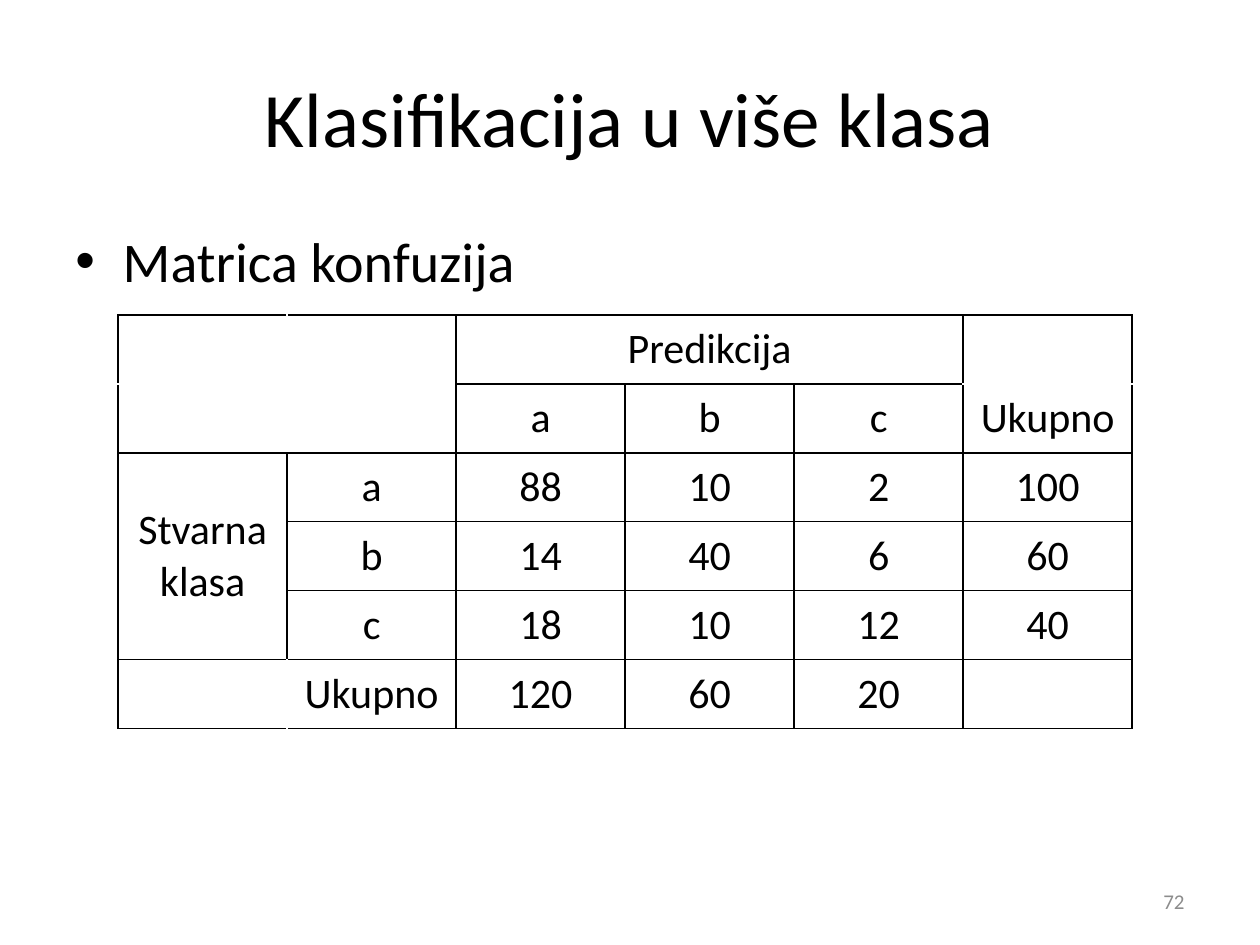
from dataclasses import dataclass

from lxml import etree
from pptx import Presentation
from pptx.dml.color import RGBColor
from pptx.enum import text as t
from pptx.oxml import ns
from pptx.util import Pt


@dataclass(frozen=True)
class Theme:
    font: str = "Calibri"
    ink: str = "000000"
    paper: str = "FFFFFF"
    muted: str = "8C8C8C"
    title: float = 44
    body: float = 32
    table: float = 24
    number: float = 12
    rule: float = 1


@dataclass(frozen=True)
class Box:
    left: float
    top: float
    width: float
    height: float

    def lengths(self):
        return Pt(self.left), Pt(self.top), Pt(self.width), Pt(self.height)


@dataclass(frozen=True)
class Merge:
    first: tuple[int, int]
    last: tuple[int, int]


THEME = Theme()
LEFT, CENTER, RIGHT = t.PP_ALIGN.LEFT, t.PP_ALIGN.CENTER, t.PP_ALIGN.RIGHT
MIDDLE, TOP = t.MSO_ANCHOR.MIDDLE, t.MSO_ANCHOR.TOP

MATRIX_BOX = Box(67.5, 180, 579.6, 236.4)
MATRIX = [
    ["", "", "Predikcija", "", "", ""],
    ["", "", "a", "b", "c", "Ukupno"],
    ["Stvarna\nklasa", "a", "88", "10", "2", "100"],
    ["", "b", "14", "40", "6", "60"],
    ["", "c", "18", "10", "12", "40"],
    ["", "Ukupno", "120", "60", "20", ""],
]
MERGES = [Merge((0, 2), (0, 4)), Merge((2, 0), (4, 0))]
# Neighbouring cells that read as one, so the rule between them is white.
OPEN_GROUPS = [
    {(0, 0), (0, 1), (1, 0), (1, 1)},
    {(0, 5), (1, 5)},
    {(5, 0), (5, 1)},
]
SIDES = {"lnL": (0, -1), "lnR": (0, 1), "lnT": (-1, 0), "lnB": (1, 0)}


def write(frame, content: str, *, size: float, color: str = THEME.ink,
          align=CENTER, bullet: str = "", indent: float = 0,
          before: float = 0) -> None:
    """Fill a text frame, one paragraph per line of content."""
    frame.text = content
    for paragraph in frame.paragraphs:
        paragraph.alignment = align
        paragraph.space_before = Pt(before)
        for run in paragraph.runs:
            run.font.name = THEME.font
            run.font.size = Pt(size)
            run.font.color.rgb = RGBColor.from_string(color)
        if bullet:
            properties = paragraph._p.get_or_add_pPr()
            properties.set("marL", str(Pt(indent)))
            properties.set("indent", str(-Pt(indent)))
            etree.SubElement(properties, ns.qn("a:buFont"), typeface="Arial")
            etree.SubElement(properties, ns.qn("a:buChar"), char=bullet)


def add_text(slide, box: Box, content: str, *, anchor=MIDDLE, **style) -> None:
    frame = slide.shapes.add_textbox(*box.lengths()).text_frame
    frame.word_wrap = True
    frame.vertical_anchor = anchor
    write(frame, content, **style)


def draw_borders(cell, row: int, column: int) -> None:
    group = next((g for g in OPEN_GROUPS if (row, column) in g), set())
    properties = cell._tc.get_or_add_tcPr()
    for side, (down, across) in SIDES.items():
        is_open = (row + down, column + across) in group
        line = etree.SubElement(properties, ns.qn(f"a:{side}"),
                                w=str(Pt(THEME.rule)))
        fill = etree.SubElement(line, ns.qn("a:solidFill"))
        etree.SubElement(fill, ns.qn("a:srgbClr"),
                         val=THEME.paper if is_open else THEME.ink)


def add_matrix(slide) -> None:
    rows, columns = len(MATRIX), len(MATRIX[0])
    matrix = slide.shapes.add_table(rows, columns, *MATRIX_BOX.lengths()).table
    matrix.first_row = matrix.horz_banding = False
    for column in matrix.columns:
        column.width = Pt(MATRIX_BOX.width / columns)
    for row in matrix.rows:
        row.height = Pt(MATRIX_BOX.height / rows)
    for r, values in enumerate(MATRIX):
        for c, value in enumerate(values):
            cell = matrix.cell(r, c)
            draw_borders(cell, r, c)
            cell.fill.background()
            cell.vertical_anchor = MIDDLE
            if value:
                write(cell.text_frame, value, size=THEME.table)
    for merge in MERGES:
        matrix.cell(*merge.first).merge(matrix.cell(*merge.last))


def main() -> None:
    deck = Presentation()
    deck.slide_width, deck.slide_height = Pt(720), Pt(540)
    slide = deck.slides.add_slide(deck.slide_layouts[6])
    add_text(slide, Box(36, 21.6, 648, 90), "Klasifikacija u više klasa",
             size=THEME.title)
    add_text(slide, Box(36, 126, 648, 48), "Matrica konfuzija", anchor=TOP,
             size=THEME.body, align=LEFT, bullet="•", indent=27, before=6.4)
    add_text(slide, Box(516, 500.5, 168, 28.75), "72",
             size=THEME.number, color=THEME.muted, align=RIGHT)
    add_matrix(slide)
    deck.save("out.pptx")


if __name__ == "__main__":
    main()
